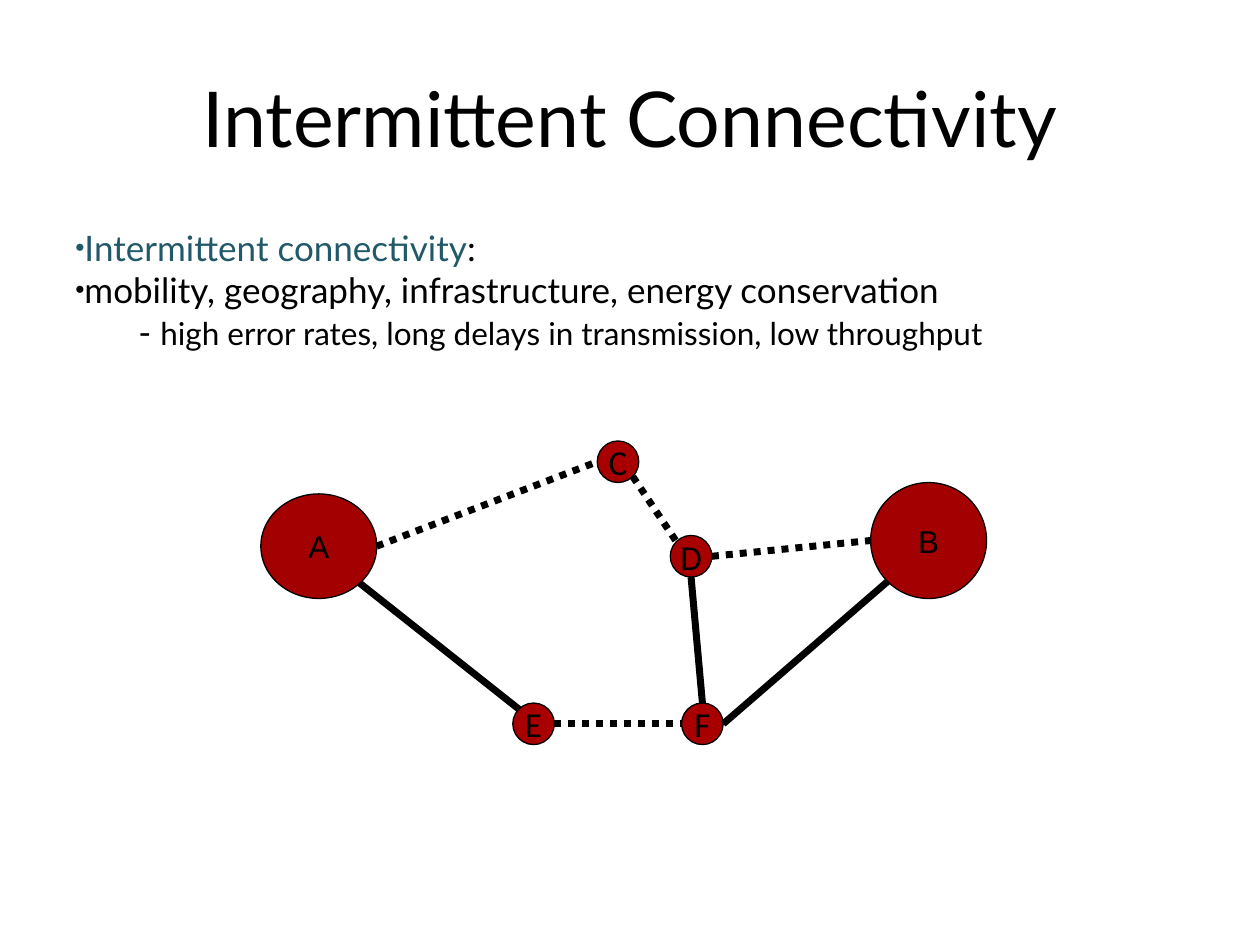
"""Builds a slide on intermittent connectivity with a six-node network."""
from math import cos, radians, sin

from lxml.etree import SubElement
from pptx import Presentation
from pptx.dml.color import RGBColor
from pptx.enum.dml import MSO_LINE
from pptx.enum.shapes import MSO_CONNECTOR, MSO_SHAPE
from pptx.enum.text import MSO_ANCHOR, PP_ALIGN
from pptx.oxml.ns import qn
from pptx.util import Inches, Pt


def paint(target, color):
    if hasattr(target, "solid"):
        target.solid()
        target.fore_color.rgb = RGBColor.from_string(color)
    else:
        target.color.rgb = RGBColor.from_string(color)


def write(para, text, size=20, font="Lato", color="000000", align=None):
    run = para.add_run()
    run.text = text
    run.font.size = Pt(size)
    run.font.name = font
    paint(run.font, color)
    if align is not None:
        para.alignment = align


deck = Presentation()
deck.slide_width, deck.slide_height = Inches(10), Inches(7.5)
slide = deck.slides.add_slide(deck.slide_layouts[5])
shapes = slide.shapes

title = shapes.title
title.left, title.top = Inches(0.5), Inches(0.3)
title.width, title.height = Inches(9), Inches(1.25)
title.text_frame.vertical_anchor = MSO_ANCHOR.MIDDLE
write(title.text_frame.paragraphs[0], "Intermittent Connectivity",
      size=44, align=PP_ALIGN.CENTER)

body = shapes.add_textbox(Inches(0.5), Inches(1.75), Inches(9), Inches(4.95))
frame = body.text_frame
frame.word_wrap = True
points = [
    (True, [("Intermittent connectivity", 20, "215968"), (":", 20, "000000")]),
    (True, [("mobility, geography, infrastructure, energy conservation",
             20, "000000")]),
    (False, [("- ", 20, "000000"),
             ("high error rates, long delays in transmission, low throughput",
              18, "000000")]),
]
for row, (dot, runs) in enumerate(points):
    para = frame.add_paragraph() if row else frame.paragraphs[0]
    props = para._p.get_or_add_pPr()
    props.set("marL", str(Inches(0 if dot else 0.5)))
    props.set("indent", str(Inches(-0.38 if dot else 0)))
    if dot:
        SubElement(props, qn("a:buSzPct"), val="75000")
        SubElement(props, qn("a:buFont"), typeface="Arial")
        SubElement(props, qn("a:buChar"), char="•")
    for text, size, color in runs:
        write(para, text, size=size, color=color)

big = {"size": 18, "font": "Arial"}
small = {"size": 20, "font": "Calibri"}
nodes = {
    "A": (2.07, 3.92, 0.92, 0.83, "A30101", big),
    "B": (6.91, 3.83, 0.92, 0.92, "A30101", big),
    "E": (4.07, 5.58, 0.33, 0.33, "A80000", small),
    "D": (5.32, 4.25, 0.33, 0.33, "A80000", small),
    "F": (5.41, 5.58, 0.33, 0.33, "A80000", small),
    "C": (4.74, 3.5, 0.33, 0.33, "A80000", small),
}
for name, (left, top, width, height, color, style) in nodes.items():
    node = shapes.add_shape(MSO_SHAPE.OVAL, Inches(left), Inches(top),
                            Inches(width), Inches(height))
    node.shadow.inherit = False
    paint(node.fill, color)
    paint(node.line, "000000")
    node.line.width = Pt(0.75)
    node.text_frame.word_wrap = False
    node.text_frame.vertical_anchor = MSO_ANCHOR.MIDDLE
    write(node.text_frame.paragraphs[0], name, align=PP_ALIGN.CENTER, **style)

links = [
    ("A", 0, "C", 180, True),
    ("A", 45, "E", 225, False),
    ("C", 45, "D", 225, True),
    ("B", 135, "F", 0, False),
    ("D", 90, "F", 270, False),
    ("D", 0, "B", 180, True),
    ("E", 0, "F", 180, True),
]
for start, out, end, into, dotted in links:
    ends = []
    for name, angle in ((start, out), (end, into)):
        left, top, width, height = nodes[name][:4]
        ends += [Inches(left + width / 2 * (1 + cos(radians(angle)))),
                 Inches(top + height / 2 * (1 + sin(radians(angle))))]
    link = shapes.add_connector(MSO_CONNECTOR.STRAIGHT, *ends)
    paint(link.line, "000000")
    link.line.width = Pt(4)
    if dotted:
        link.line.dash_style = MSO_LINE.ROUND_DOT
    SubElement(link._element.spPr, qn("a:effectLst"))

deck.save("out.pptx")
